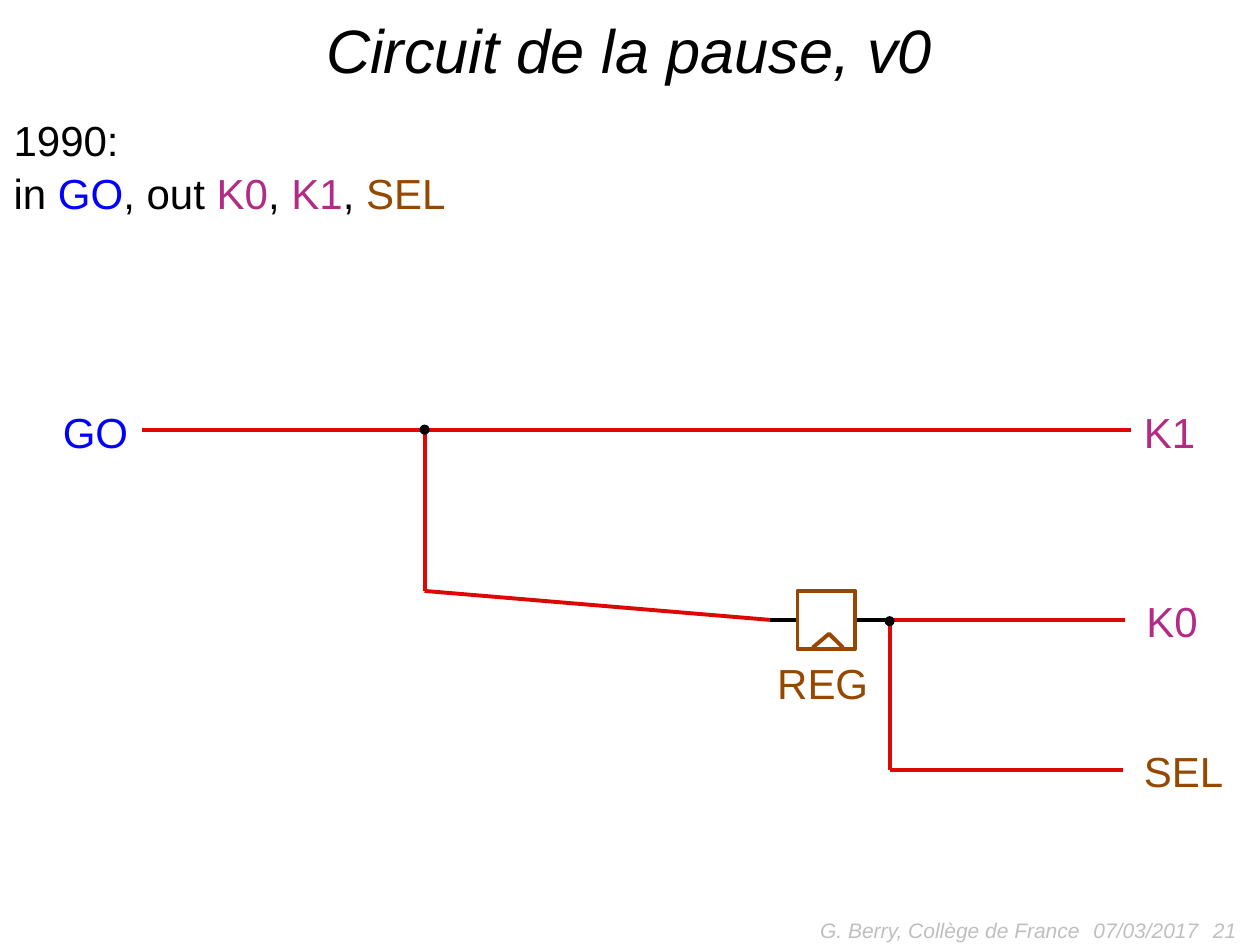
from lxml import etree
from pptx import Presentation, util as u
from pptx.dml.color import RGBColor
from pptx.enum import shapes, text
from pptx.oxml.ns import qn

BLACK, RED, BROWN = "000000", "DD0806", "964700"
BLUE, PURPLE, GREY = "0000FF", "B22C85", "BFBFBF"


def rgb(color):
    return RGBColor.from_string(color)


class Canvas:
    """Current slide, drawn on a grid of 100 columns by 75 rows."""
    font, size, spacing, weight = "Arial", 24, 1.05, 2.25

    def __init__(self, prs):
        self.col, self.row = prs.slide_width / 100, prs.slide_height / 75
        self.s = prs.slides.add_slide(prs.slide_layouts[6])

    def pos(self, *lengths):
        return [u.Emu(round(v * (self.row if i % 2 else self.col)))
                for i, v in enumerate(lengths)]

    def stroke(self, line, color):
        line.color.rgb = rgb(color)
        line.width = u.Pt(self.weight)

    def text(self, box, paragraphs, size=size, italic=False, align="LEFT",
             wrap=False, anchor="TOP", spacing=spacing):
        """Each paragraph is a list of (words, colour) runs."""
        tf = self.s.shapes.add_textbox(*self.pos(*box)).text_frame
        tf.word_wrap = wrap
        tf.vertical_anchor = getattr(text.MSO_ANCHOR, anchor)
        for i, runs in enumerate(paragraphs):
            p = tf.add_paragraph() if i else tf.paragraphs[0]
            p.alignment = getattr(text.PP_ALIGN, align)
            p.line_spacing = spacing
            p.font.name, p.font.size, p.font.italic = self.font, u.Pt(size), italic
            for words, color in runs:
                r = p.add_run()
                r.text = words
                r.font.color.rgb = rgb(color)

    def wire(self, x1, y1, x2, y2, color=RED):
        sp = self.s.shapes.add_connector(
            shapes.MSO_CONNECTOR.STRAIGHT, *self.pos(x1, y1, x2, y2))
        self.stroke(sp.line, color)
        etree.SubElement(sp._element.spPr, qn("a:effectLst"))

    def frame(self, box, color):
        sp = self.s.shapes.add_shape(shapes.MSO_SHAPE.RECTANGLE, *self.pos(*box))
        sp.shadow.inherit = False
        sp.fill.background()
        self.stroke(sp.line, color)

    def dot(self, x, y, d=0.8):
        sp = self.s.shapes.add_shape(
            shapes.MSO_SHAPE.OVAL, *self.pos(x - d / 2, y - d / 2, d, d))
        sp.shadow.inherit = False
        sp.fill.solid()
        sp.fill.fore_color.rgb = rgb(BLACK)
        sp.line.fill.background()

    def polyline(self, points, color):
        start, *rest = [self.pos(*pt) for pt in points]
        builder = self.s.shapes.build_freeform(*start)
        builder.add_line_segments(rest, close=False)
        sp = builder.convert_to_shape()
        sp.shadow.inherit = False
        sp.fill.background()
        self.stroke(sp.line, color)


def main():
    prs = Presentation()
    prs.slide_width, prs.slide_height = u.Inches(10), u.Inches(7.5)
    c = Canvas(prs)

    # Title and interface
    c.text((1.2, 0.2, 97.5, 6.9), [[("Circuit de la pause, v0", BLACK)]],
           size=35, italic=True, align="CENTER", wrap=True)
    c.text((0.1, 8.4, 36.6, 9.1), [
        [("1990:", BLACK)],
        [("in ", BLACK), ("GO", BLUE), (", out ", BLACK), ("K0", PURPLE),
         (", ", BLACK), ("K1", PURPLE), (", ", BLACK), ("SEL", BROWN)]])

    # Wires
    go_y, reg_y, sel_y = 34.1, 49.2, 61.1
    fork_x, out_x = 33.7, 70.6
    for ends in ((11.3, go_y, 89.8, go_y),
                 (fork_x, go_y, fork_x, 46.9),
                 (fork_x, 46.9, 61.1, reg_y),
                 (out_x, reg_y, 89.3, reg_y),
                 (out_x, reg_y, out_x, sel_y),
                 (out_x, sel_y, 89.1, sel_y)):
        c.wire(*ends)

    # Register with its pins and clock mark
    c.wire(61.1, reg_y, 63.3, reg_y, BLACK)
    c.wire(67.9, reg_y, out_x, reg_y, BLACK)
    c.frame((63.3, 46.9, 4.6, 4.6), BROWN)
    c.polyline([(64.5, 51.4), (65.8, 50.3), (66.9, 51.4)], BROWN)

    # Junctions
    c.dot(fork_x, go_y)
    c.dot(out_x, reg_y + 0.1)

    # Signal names
    for x, y, w, name, color in ((4, 31.6, 7.2, "GO", BLUE),
                                 (89.8, 31.6, 6.1, "K1", PURPLE),
                                 (90, 46.6, 6.1, "K0", PURPLE),
                                 (89.8, 58.5, 8.4, "SEL", BROWN),
                                 (60.7, 51.5, 9.3, "REG", BROWN)):
        c.text((x, y, w, 5), [[(name, color)]])

    # Footer
    for x, w, words, align in ((55, 31.7, "G. Berry, Collège de France", "RIGHT"),
                               (85.8, 12, "07/03/2017", "LEFT"),
                               (75.8, 23.3, "21", "RIGHT")):
        c.text((x, 71.8, w, 4), [[(words, GREY)]], size=12, italic=True,
               align=align, wrap=True, anchor="MIDDLE", spacing=1.0)

    prs.save("out.pptx")


if __name__ == "__main__":
    main()
